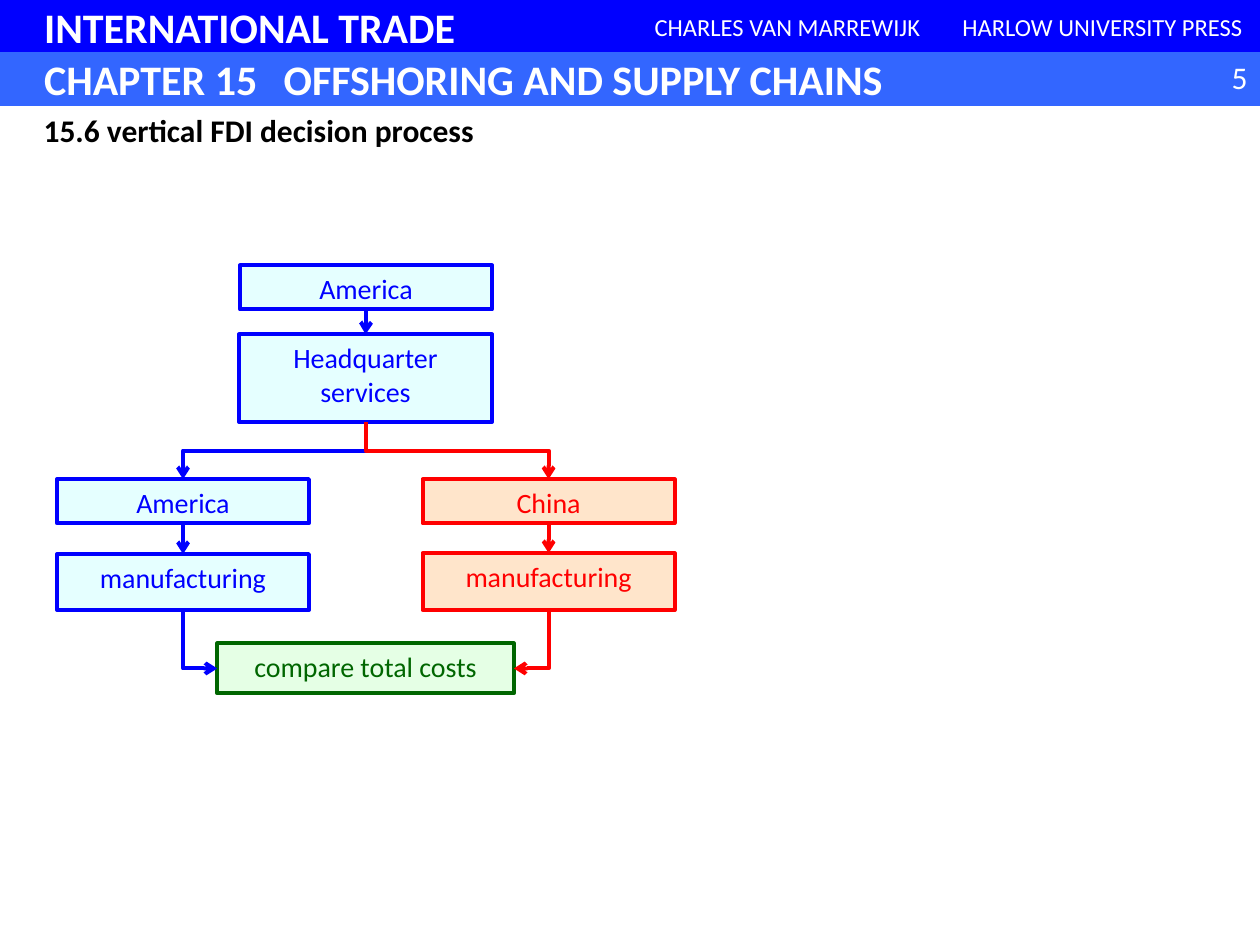
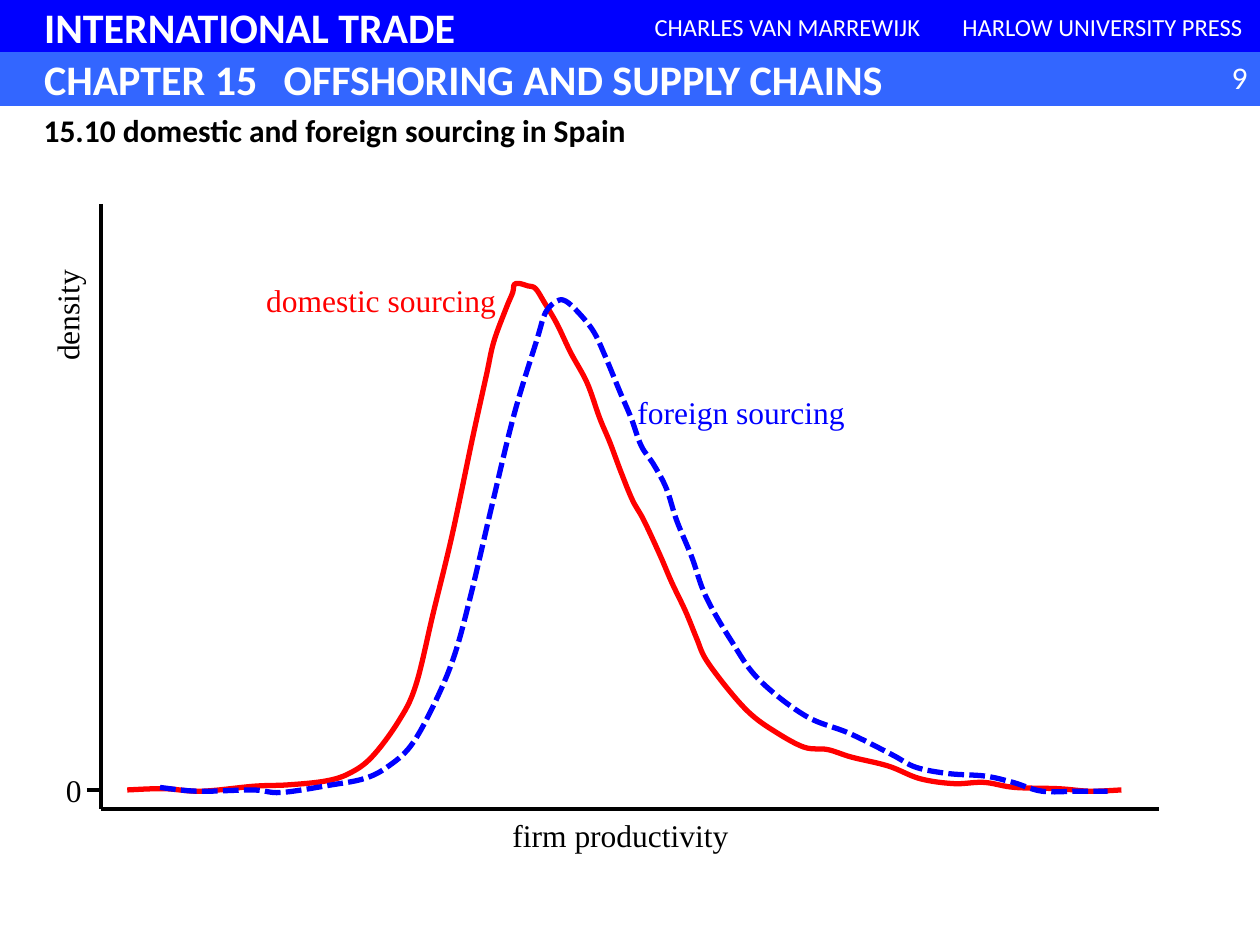
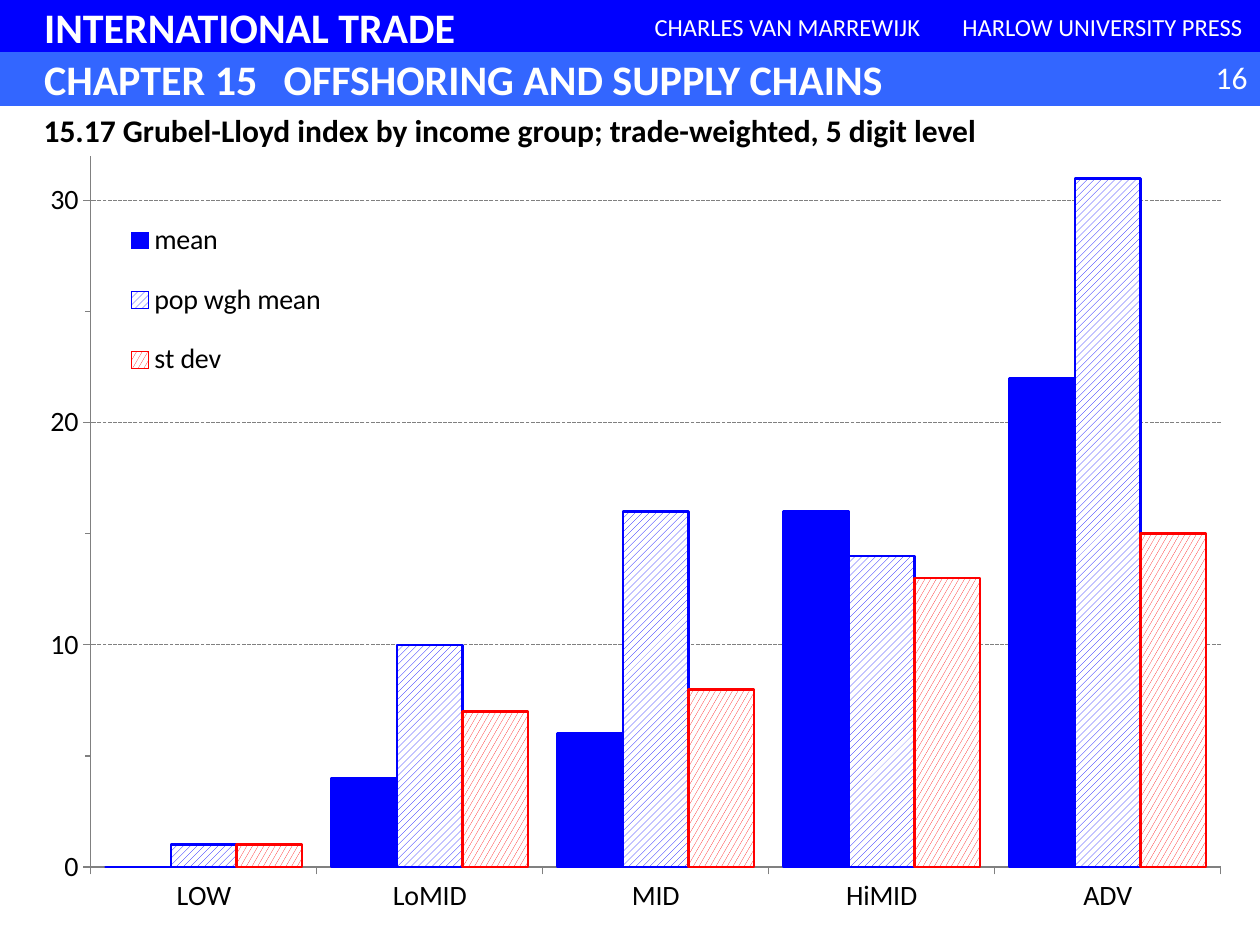
from lxml import etree
from pptx import Presentation
from pptx import util as u
from pptx.chart.data import CategoryChartData
from pptx.dml.color import RGBColor
from pptx.enum import chart as charts
from pptx.enum import dml, shapes, text
from pptx.oxml.ns import qn

COLORS = {
    "blue": "0000FF", "band": "3366FF", "red": "FF0000", "green": "006600",
    "pale_blue": "CCFFFF", "pale_red": "FFCC99", "pale_green": "CCFFCC",
    "white": "FFFFFF", "black": "000000", "gray": "808080",
}
RGB = {name: RGBColor.from_string(value) for name, value in COLORS.items()}
SERIF = "Times New Roman"
LEFT, CENTER, RIGHT = text.PP_ALIGN.LEFT, text.PP_ALIGN.CENTER, text.PP_ALIGN.RIGHT
TOP, MIDDLE = text.MSO_ANCHOR.TOP, text.MSO_ANCHOR.MIDDLE
INDENT = 0.89
TAB = 4.83
SLIDE_WIDTH, CHART_HEIGHT = 25.4, 16.94
CURVE_UNIT = u.Cm(2.54) / 100


def add_text(slide, area, words, size, color, fill=None, line=None, weight=0.75,
             align=LEFT, anchor=TOP, font="Calibri", bold=False, wrap=True):
    """Add a filled rectangle, or a text box when there is no fill; area is in cm."""
    area = [u.Cm(length) for length in area]
    if fill:
        shape = slide.shapes.add_shape(shapes.MSO_SHAPE.RECTANGLE, *area)
        shape.shadow.inherit = False
        shape.fill.solid()
        shape.fill.fore_color.rgb = RGB[fill]
        if line:
            shape.line.color.rgb = RGB[line]
            shape.line.width = u.Pt(weight)
        else:
            shape.line.fill.background()
    else:
        shape = slide.shapes.add_textbox(*area)
    frame = shape.text_frame
    frame.text = words
    frame.word_wrap = wrap
    frame.vertical_anchor = anchor
    paragraph = frame.paragraphs[0]
    paragraph.alignment = align
    run_font = paragraph.runs[0].font
    run_font.name, run_font.size, run_font.bold = font, u.Pt(size), bold
    run_font.color.rgb = RGB[color]
    return shape


def bend_segments(curve):
    """Turn the straight segments of a freeform into smooth cubic ones."""
    outline = next(curve.element.iter(qn("a:path")))
    knots = [(int(point.get("x")), int(point.get("y"))) for point in outline.iter(qn("a:pt"))]
    padded = [knots[0], *knots, knots[-1]]
    segments = outline.findall(qn("a:lnTo"))
    for segment, a, b, c, d in zip(segments, padded, padded[1:], padded[2:], padded[3:]):
        bend = etree.Element(qn("a:cubicBezTo"))
        leaving = [q + (r - p) / 6 for p, q, r in zip(a, b, c)]
        arriving = [r - (s - q) / 6 for q, r, s in zip(b, c, d)]
        for x, y in (leaving, arriving, c):
            etree.SubElement(bend, qn("a:pt"), x=str(round(x)), y=str(round(y)))
        outline.replace(segment, bend)


presentation = Presentation()
presentation.slide_width, presentation.slide_height = u.Cm(SLIDE_WIDTH), u.Cm(19.05)

# Header bands, page number and title on every slide
pages = [
    ("5", "15.6 vertical FDI decision process", 9.47),
    ("9", "15.10 domestic and foreign sourcing in Spain", 12.57),
    ("16", "15.17 Grubel-Lloyd index by income group; trade-weighted, 5 digit level", 22.43),
]
header = [
    ((0, 0, SLIDE_WIDTH, 1.06), "INTERNATIONAL TRADE", "blue", True),
    ((12.7, 0, 6.35, 1.06), "CHARLES VAN MARREWIJK", "blue", False),
    ((19.05, 0.02, 6.35, 1.04), "HARLOW UNIVERSITY PRESS", "blue", False),
    ((0, 1.06, SLIDE_WIDTH, 1.06), "CHAPTER 15\tOFFSHORING AND SUPPLY CHAINS", "band", True),
]
slides = []
for number, title, title_width in pages:
    slide = presentation.slides.add_slide(presentation.slide_layouts[6])
    slides.append(slide)
    for area, words, fill, is_band in header:
        part = add_text(slide, area, words, 24 if is_band else 14, "white", fill, fill,
                        align=LEFT if is_band else CENTER, anchor=MIDDLE, bold=is_band)
        if is_band:
            part.text_frame.margin_left = u.Cm(INDENT)
        if "\t" in words:
            properties = part.text_frame.paragraphs[0]._p.get_or_add_pPr()
            tabs = etree.SubElement(properties, qn("a:tabLst"))
            etree.SubElement(tabs, qn("a:tab"), pos=str(u.Cm(TAB)), algn="l")
    add_text(slide, (23.7, 1.04, 1.7, 1.02), number, 18, "white", align=RIGHT)
    add_text(slide, (0.63, 2.11, title_width, 1.02), title, 18, "black", bold=True, wrap=False)
decision_slide, density_slide, index_slide = slides

# Decision process
boxes = {}
for name, words, left, top, width, height, color in [
    ("home", "America", 4.84, 5.35, 5.08, 0.89, "blue"),
    ("services", "Headquarter services", 4.82, 6.74, 5.1, 1.77, "blue"),
    ("america", "America", 1.15, 9.66, 5.08, 0.89, "blue"),
    ("american plant", "manufacturing", 1.15, 11.17, 5.08, 1.13, "blue"),
    ("china", "China", 8.52, 9.66, 5.08, 0.89, "red"),
    ("chinese plant", "manufacturing", 8.52, 11.15, 5.08, 1.15, "red"),
    ("costs", "compare total costs", 4.38, 12.97, 5.98, 1.01, "green"),
]:
    box = add_text(decision_slide, (left, top, width, height), words, 16, color,
                   "pale_" + color, color, 2.25, CENTER)
    tint = box.element.spPr.find(".//" + qn("a:srgbClr"))
    etree.SubElement(tint, qn("a:alpha"), val="50000")
    boxes[name] = box

TOP_SITE, LEFT_SITE, BOTTOM_SITE, RIGHT_SITE = range(4)
for source, target, site, color in [
    ("home", "services", TOP_SITE, "blue"),
    ("services", "america", TOP_SITE, "blue"),
    ("services", "china", TOP_SITE, "red"),
    ("america", "american plant", TOP_SITE, "blue"),
    ("china", "chinese plant", TOP_SITE, "red"),
    ("american plant", "costs", LEFT_SITE, "blue"),
    ("chinese plant", "costs", RIGHT_SITE, "red"),
]:
    arrow = decision_slide.shapes.add_connector(shapes.MSO_CONNECTOR.ELBOW, 0, 0, 0, 0)
    arrow.begin_connect(boxes[source], BOTTOM_SITE)
    arrow.end_connect(boxes[target], site)
    # A quarter turn makes the elbow leave its box downwards
    across, down = arrow.end_x - arrow.begin_x, arrow.end_y - arrow.begin_y
    middle_x, middle_y = arrow.begin_x + across / 2, arrow.begin_y + down / 2
    arrow.left, arrow.top = int(middle_x - down / 2), int(middle_y - abs(across) / 2)
    arrow.width, arrow.height = down, abs(across)
    transform = arrow.element.spPr.find(qn("a:xfrm"))
    transform.set("rot", "16200000" if across > 0 else "5400000")
    transform.set("flipH", "1" if across > 0 else "0")
    if site != TOP_SITE:
        arrow.element.spPr.find(qn("a:prstGeom")).set("prst", "bentConnector2")
    arrow.line.color.rgb = RGB[color]
    etree.SubElement(arrow.line._get_or_add_ln(), qn("a:tailEnd"), type="arrow")

# Density curves, with knots in hundredths of an inch
domestic = [
    (101, 627), (130, 626), (160, 628), (202, 624), (228, 623), (258, 620), (277, 614),
    (295, 601), (316, 573), (330, 544), (344, 486), (359, 424), (375, 348), (386, 298),
    (392, 271), (402, 244), (407, 232), (408, 226), (412, 225), (419, 227), (425, 229),
    (432, 240), (442, 257), (453, 280), (466, 304), (476, 332), (484, 351), (493, 375),
    (502, 397), (511, 413), (524, 441), (533, 462), (544, 485), (553, 507), (560, 523),
    (577, 546), (595, 566), (614, 580), (638, 593), (657, 595), (676, 601), (705, 608),
    (730, 618), (757, 622), (781, 621), (805, 625), (840, 626), (865, 628), (890, 627),
]
foreign = [
    (127, 625), (157, 628), (201, 627), (223, 629), (263, 623), (289, 618), (307, 609),
    (326, 592), (344, 560), (360, 522), (373, 475), (390, 403), (408, 329), (426, 270),
    (433, 248), (442, 239), (449, 239), (459, 248), (471, 263), (480, 282), (492, 311),
    (501, 332), (509, 354), (519, 369), (529, 388), (537, 413), (549, 442), (560, 473),
    (580, 508), (602, 539), (639, 568), (674, 582), (708, 599), (727, 609), (753, 614),
    (782, 616), (804, 621), (827, 628), (855, 628), (879, 628),
]
for knots, color, dash in [(domestic, "red", None),
                           (foreign, "blue", dml.MSO_LINE.SQUARE_DOT)]:
    points = [(x * CURVE_UNIT, y * CURVE_UNIT) for x, y in knots]
    builder = density_slide.shapes.build_freeform(*points[0])
    builder.add_line_segments(points[1:], close=False)
    curve = builder.convert_to_shape()
    bend_segments(curve)
    curve.shadow.inherit = False
    curve.fill.background()
    curve.line.color.rgb = RGB[color]
    curve.line.width = u.Pt(3)
    if dash:
        curve.line.dash_style = dash

for ends in [(2.03, 4.11, 2.03, 16.31), (2.03, 16.31, 23.37, 16.31), (1.75, 15.93, 2.03, 15.93)]:
    axis_line = density_slide.shapes.add_connector(
        shapes.MSO_CONNECTOR.STRAIGHT, *[u.Cm(length) for length in ends])
    axis_line.line.color.rgb = RGB["black"]

for words, area, color in [
    ("firm productivity", (10.06, 16.33, 4.9, 1.02), "black"),
    ("domestic sourcing", (5.08, 5.54, 5.21, 1.02), "red"),
    ("foreign sourcing", (12.58, 7.8, 4.72, 1.02), "blue"),
    ("0", (1.07, 15.42, 0.84, 1.02), "black"),
    ("density", (0.84, 5.3, 1.27, 2.11), "black"),
]:
    label = add_text(density_slide, area, words, 18, color, align=CENTER, font=SERIF, wrap=False)
    if words == "density":
        label.text_frame._txBody.bodyPr.set("vert", "vert270")

# Grubel-Lloyd chart
data = CategoryChartData(number_format="0")
data.categories = ["LOW", "LoMID", "MID", "HiMID", "ADV"]
data.add_series("mean", [0, 4, 6, 16, 22])
data.add_series("pop wgh mean", [1, 10, 16, 14, 31])
data.add_series("st dev", [1, 7, 8, 13, 15])
chart = index_slide.shapes.add_chart(
    charts.XL_CHART_TYPE.COLUMN_CLUSTERED, 0, u.Cm(2.11),
    u.Cm(SLIDE_WIDTH), u.Cm(CHART_HEIGHT), data).chart
chart.has_title = False
chart.font.name, chart.font.size = "Calibri", u.Pt(16)
chart.font.color.rgb = RGB["black"]

plot = chart.plots[0]
plot.gap_width, plot.overlap, plot.vary_by_categories = 45, 0, False
patterns = [None, dml.MSO_PATTERN.WIDE_UPWARD_DIAGONAL, dml.MSO_PATTERN.LARGE_CONFETTI]
for series, color, pattern in zip(plot.series, ["blue", "blue", "red"], patterns):
    fill = series.format.fill
    if pattern:
        fill.patterned()
        fill.pattern = pattern
        fill.back_color.rgb = RGB["white"]
    else:
        fill.solid()
    fill.fore_color.rgb = RGB[color]
    series.format.line.color.rgb = RGB[color]
    series.format.line.width = u.Pt(1.5)

value_axis = chart.value_axis
value_axis.minimum_scale, value_axis.maximum_scale = 0, 32
value_axis.major_unit, value_axis.minor_unit = 10, 5
value_axis.minor_tick_mark = charts.XL_TICK_MARK.OUTSIDE
value_axis.tick_labels.number_format = "0"
value_axis.tick_labels.number_format_is_linked = False
gridline = value_axis.major_gridlines.format.line
gridline.dash_style = dml.MSO_LINE.SQUARE_DOT
for axis in (value_axis, chart.category_axis):
    axis.major_tick_mark = charts.XL_TICK_MARK.OUTSIDE
for line in (gridline, value_axis.format.line, chart.category_axis.format.line):
    line.color.rgb = RGB["gray"]
    line.width = u.Pt(0.75)

chart.has_legend = True
chart.legend.position = charts.XL_LEGEND_POSITION.LEFT
chart.legend.include_in_layout = False
# Places in cm inside the chart, stored as shares of its size
for tag, index, place in [("c:plotArea", 0, (1.83, 1.04, 22.78, 14.33)),
                          ("c:legend", 1, (2.4, 1.88, 4.32, 4.12))]:
    parent = next(chart.element.iter(qn(tag)))
    for old_layout in parent.findall(qn("c:layout")):
        parent.remove(old_layout)
    layout = etree.Element(qn("c:layout"))
    manual = etree.SubElement(layout, qn("c:manualLayout"))
    shares = [length / side for length, side in zip(place, (SLIDE_WIDTH, CHART_HEIGHT) * 2)]
    settings = [("xMode", "edge"), ("yMode", "edge"), *zip("xywh", shares)]
    if tag == "c:plotArea":
        settings.insert(0, ("layoutTarget", "inner"))
    for key, value in settings:
        etree.SubElement(manual, qn("c:" + key), val=str(value))
    parent.insert(index, layout)

# Every connector: same weight, no shadow
for slide in slides:
    for shape in slide.shapes:
        if shape.shape_type == shapes.MSO_SHAPE_TYPE.LINE:
            shape.line.width = u.Pt(2.25)
            etree.SubElement(shape.element.spPr, qn("a:effectLst"))

presentation.save("out.pptx")
